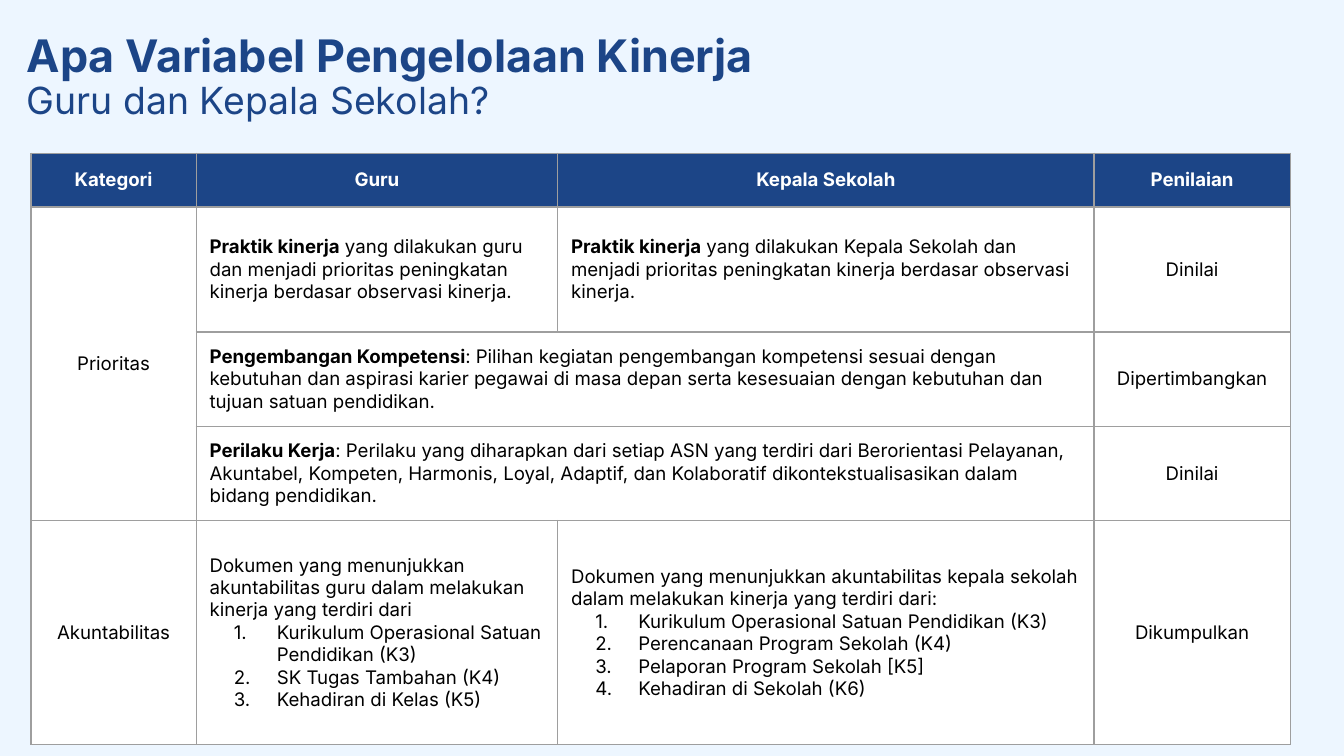
from lxml.etree import SubElement
from pptx import Presentation
from pptx.dml.color import RGBColor
from pptx.enum.text import MSO_ANCHOR, MSO_AUTO_SIZE, PP_ALIGN
from pptx.oxml.ns import qn
from pptx.util import Inches, Pt

COLORS = {"background": "EDF6FF", "navy": "1C4587", "white": "FFFFFF",
          "black": "000000", "border": "9E9E9E"}
FONT = "Inter"

# Title lines: text, size, bold
TITLE = [("Apa Variabel Pengelolaan Kinerja", 24, True),
         ("Guru dan Kepala Sekolah?", 20, False)]

HEADERS = ["Kategori", "Guru", "Kepala Sekolah", "Penilaian"]
# Each cell holds a bold lead, a text and a numbered list; None is covered by a merge
ROWS = [
    [("", "Prioritas", []),
     ("Praktik kinerja", " yang dilakukan guru dan menjadi prioritas peningkatan "
      "kinerja berdasar observasi kinerja.", []),
     ("Praktik kinerja", " yang dilakukan Kepala Sekolah dan menjadi prioritas "
      "peningkatan kinerja berdasar observasi kinerja.", []),
     ("", "Dinilai", [])],
    [None,
     ("Pengembangan Kompetensi", ": Pilihan kegiatan pengembangan kompetensi sesuai "
      "dengan kebutuhan dan aspirasi karier pegawai di masa depan serta kesesuaian "
      "dengan kebutuhan dan tujuan satuan pendidikan.", []),
     None,
     ("", "Dipertimbangkan", [])],
    [None,
     ("Perilaku Kerja", ": Perilaku yang diharapkan dari setiap ASN yang terdiri dari "
      "Berorientasi Pelayanan, Akuntabel, Kompeten, Harmonis, Loyal, Adaptif, dan "
      "Kolaboratif dikontekstualisasikan dalam bidang pendidikan.", []),
     None,
     ("", "Dinilai", [])],
    [("", "Akuntabilitas", []),
     ("", "Dokumen yang menunjukkan akuntabilitas guru dalam melakukan kinerja yang "
      "terdiri dari",
      ["Kurikulum Operasional Satuan Pendidikan (K3)", "SK Tugas Tambahan (K4)",
       "Kehadiran di Kelas (K5)"]),
     ("", "Dokumen yang menunjukkan akuntabilitas kepala sekolah dalam melakukan "
      "kinerja yang terdiri dari:",
      ["Kurikulum Operasional Satuan Pendidikan (K3)", "Perencanaan Program Sekolah (K4)",
       "Pelaporan Program Sekolah [K5]", "Kehadiran di Sekolah (K6)"]),
     ("", "Dikumpulkan", [])],
]
MERGES = [((1, 0), (3, 0)), ((2, 1), (2, 2)), ((3, 1), (3, 2))]
COLUMN_WIDTHS = [1.23, 2.69, 3.99, 1.46]
ROW_HEIGHTS = [0.4, 0.93, 0.57, 0.57, 1.67]
CENTERED_COLUMNS = (0, 3)


def rgb(name):
    return RGBColor.from_string(COLORS[name])


def add_run(paragraph, text, size, color, bold=False):
    run = paragraph.add_run()
    run.text = text
    run.font.name, run.font.size, run.font.bold = FONT, Pt(size), bold
    run.font.color.rgb = rgb(color)


def add_solid_fill(parent, color):
    SubElement(SubElement(parent, qn("a:solidFill")), qn("a:srgbClr"), val=COLORS[color])


def number_paragraph(paragraph):
    props = paragraph._p.get_or_add_pPr()
    props.set("marL", str(Inches(0.5)))
    props.set("indent", str(Inches(-0.32)))
    bullet_color = SubElement(props, qn("a:buClr"))
    SubElement(bullet_color, qn("a:srgbClr"), val=COLORS["black"])
    SubElement(props, qn("a:buAutoNum"), type="arabicPeriod")


def format_cell(cell, fill):
    cell.vertical_anchor = MSO_ANCHOR.MIDDLE
    cell.margin_left = cell.margin_right = Inches(0.1)
    cell.margin_top = cell.margin_bottom = Inches(0.1)
    props = cell._tc.get_or_add_tcPr()
    for side in ("lnL", "lnR", "lnT", "lnB"):
        add_solid_fill(SubElement(props, qn(f"a:{side}"), w=str(Pt(0.75))), "border")
    cell.fill.solid()
    cell.fill.fore_color.rgb = rgb(fill)


def write_cell(cell, content, color, centered, bold=False):
    lead, text, items = content
    paragraph = cell.text_frame.paragraphs[0]
    paragraph.alignment = PP_ALIGN.CENTER if centered else PP_ALIGN.LEFT
    if lead:
        add_run(paragraph, lead, 10, color, True)
    add_run(paragraph, text, 10, color, bold)
    for item in items:
        paragraph = cell.text_frame.add_paragraph()
        number_paragraph(paragraph)
        add_run(paragraph, item, 10, color)


def add_title(slide):
    title = slide.shapes.title
    title.left, title.top = Inches(0.13), Inches(0.06)
    title.width, title.height = Inches(9.37), Inches(1.04)
    frame = title.text_frame
    frame.word_wrap = True
    frame.auto_size = MSO_AUTO_SIZE.NONE
    frame.vertical_anchor = MSO_ANCHOR.MIDDLE
    frame.margin_left = frame.margin_right = Inches(0.07)
    frame.margin_top = frame.margin_bottom = Inches(0.04)
    for index, (text, size, bold) in enumerate(TITLE):
        paragraph = frame.add_paragraph() if index else frame.paragraphs[0]
        paragraph.alignment = PP_ALIGN.LEFT
        paragraph.line_spacing = 0.9
        paragraph.space_before = Pt(0)
        add_run(paragraph, text, size, "navy", bold)


def add_variable_table(slide):
    table = slide.shapes.add_table(
        len(ROW_HEIGHTS), len(COLUMN_WIDTHS), Inches(0.23), Inches(1.14),
        Inches(sum(COLUMN_WIDTHS)), Inches(sum(ROW_HEIGHTS))).table
    table.first_row = table.horz_banding = False
    for column, width in zip(table.columns, COLUMN_WIDTHS):
        column.width = Inches(width)
    for row, height in zip(table.rows, ROW_HEIGHTS):
        row.height = Inches(height)

    for c, header in enumerate(HEADERS):
        format_cell(table.cell(0, c), "navy")
        write_cell(table.cell(0, c), ("", header, []), "white", True, True)
    for r, contents in enumerate(ROWS, start=1):
        for c, content in enumerate(contents):
            format_cell(table.cell(r, c), "white")
            if content:
                write_cell(table.cell(r, c), content, "black", c in CENTERED_COLUMNS)
    for first, last in MERGES:
        table.cell(*first).merge(table.cell(*last))


def main():
    deck = Presentation()
    deck.slide_width = Inches(10)
    deck.slide_height = deck.slide_width * 9 // 16
    slide = deck.slides.add_slide(deck.slide_layouts[5])
    slide.background.fill.solid()
    slide.background.fill.fore_color.rgb = rgb("background")
    add_variable_table(slide)
    add_title(slide)
    deck.save("out.pptx")


if __name__ == "__main__":
    main()
